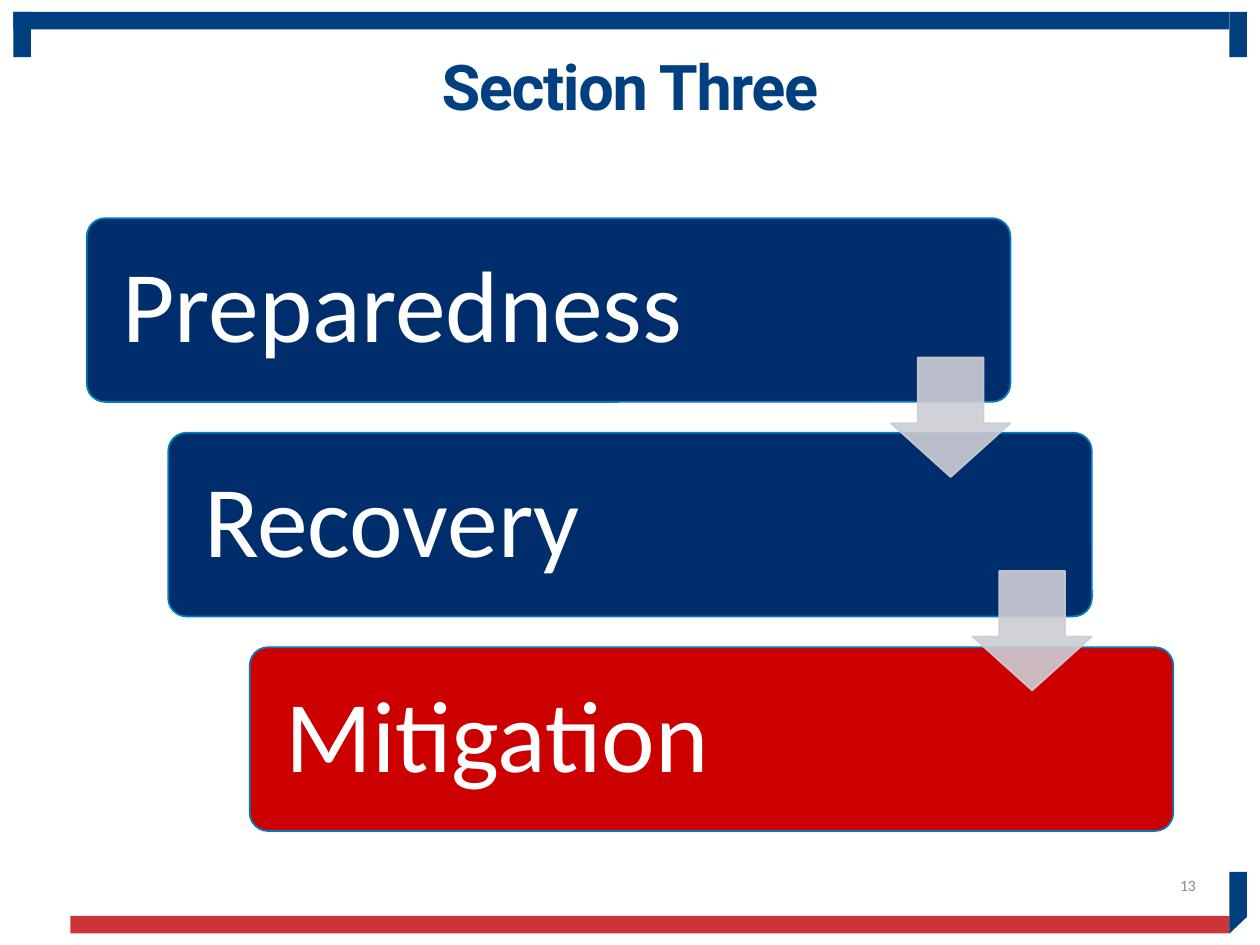
from dataclasses import dataclass
from lxml import etree
from pptx import Presentation
from pptx.dml.color import RGBColor
from pptx.enum.shapes import MSO_SHAPE
from pptx.enum.text import MSO_ANCHOR, PP_ALIGN
from pptx.oxml.ns import qn
from pptx.util import Pt

RECT, ROUND, DOWN = MSO_SHAPE.RECTANGLE, MSO_SHAPE.ROUNDED_RECTANGLE, MSO_SHAPE.DOWN_ARROW
TOP, MIDDLE = MSO_ANCHOR.TOP, MSO_ANCHOR.MIDDLE
LEFT, CENTER, RIGHT = PP_ALIGN.LEFT, PP_ALIGN.CENTER, PP_ALIGN.RIGHT


@dataclass(frozen=True)
class Theme:
    frame: str = "003F80"
    base: str = "CC3538"
    navy: str = "002E6D"
    red: str = "CC0000"
    outline: str = "007DBC"
    arrow: str = "CCCDD4"
    white: str = "FFFFFF"
    grey: str = "8D8D8E"
    head_font: str = "Roboto"
    body_font: str = "Calibri"
    title_size: int = 36
    step_size: int = 58
    number_size: int = 9


T = Theme()


def paint(sp, fill, line=None):
    sp.shadow.inherit = False
    sp.fill.solid()
    sp.fill.fore_color.rgb = RGBColor.from_string(fill)
    if line:
        sp.line.color.rgb = RGBColor.from_string(line)
        sp.line.width = Pt(1)
    else:
        sp.line.fill.background()


def write(sp, text, font, size, color, align, anchor, spacing=1.0):
    tf = sp.text_frame
    tf.word_wrap = True
    tf.vertical_anchor = anchor
    p = tf.paragraphs[0]
    p.alignment = align
    p.line_spacing = spacing
    r = p.add_run()
    r.text = text
    r.font.name = font
    r.font.size = Pt(size)
    r.font.color.rgb = RGBColor.from_string(color)
    return r


prs = Presentation()
prs.slide_width, prs.slide_height = Pt(720), Pt(540)
s = prs.slides.add_slide(prs.slide_layouts[6])

bars = [
    (7.6, 6.8, 694.8, 10, T.frame),
    (702.5, 6.8, 10, 25.9, T.frame),
    (7.6, 6.8, 10, 25.9, T.frame),
    (40.3, 523.4, 662.4, 10, T.base),
]
for x, y, w, h, color in bars:
    paint(s.shapes.add_shape(RECT, Pt(x), Pt(y), Pt(w), Pt(h)), color)

fb = s.shapes.build_freeform(Pt(702.5), Pt(498.2))
fb.add_line_segments([(Pt(712.5), Pt(498.2)), (Pt(712.5), Pt(524)), (Pt(702.5), Pt(533.5))])
paint(fb.convert_to_shape(), T.frame)

step_x, step_y, step_w, step_h = 49.6, 124.7, 527.8, 105
dx, dy = 46.55, 122.6
steps = [("Preparedness", T.navy), ("Recovery", T.navy), ("Mitigation", T.red)]
for i, (text, color) in enumerate(steps):
    sp = s.shapes.add_shape(ROUND, Pt(step_x + i * dx), Pt(step_y + i * dy), Pt(step_w), Pt(step_h))
    sp.adjustments[0] = 0.1
    paint(sp, color, T.outline)
    tf = sp.text_frame
    tf.margin_left = tf.margin_right = tf.margin_top = tf.margin_bottom = Pt(17.4)
    write(sp, text, T.body_font, T.step_size, T.white, LEFT, MIDDLE, 0.9)

arrow = 68.3
for i in range(len(steps) - 1):
    x = step_x + step_w - arrow + i * dx
    sp = s.shapes.add_shape(DOWN, Pt(x), Pt(204.3 + i * 121.9), Pt(arrow), Pt(arrow))
    sp.adjustments[0], sp.adjustments[1] = 0.55, 0.45
    paint(sp, T.arrow, T.arrow)
    for clr in sp._element.spPr.iter(qn("a:srgbClr")):
        etree.SubElement(clr, qn("a:alpha")).set("val", "90000")

title = s.shapes.add_textbox(Pt(49.6), Pt(28.8), Pt(620.6), Pt(91.4))
r = write(title, "Section Three", T.head_font, T.title_size, T.frame, CENTER, TOP, 0.9)
r.font.bold = True
r._r.get_or_add_rPr().set("spc", "-80")

number = s.shapes.add_textbox(Pt(528.5), Pt(496.8), Pt(162), Pt(28.8))
write(number, "13", T.body_font, T.number_size, T.grey, RIGHT, TOP)

prs.save("out.pptx")
